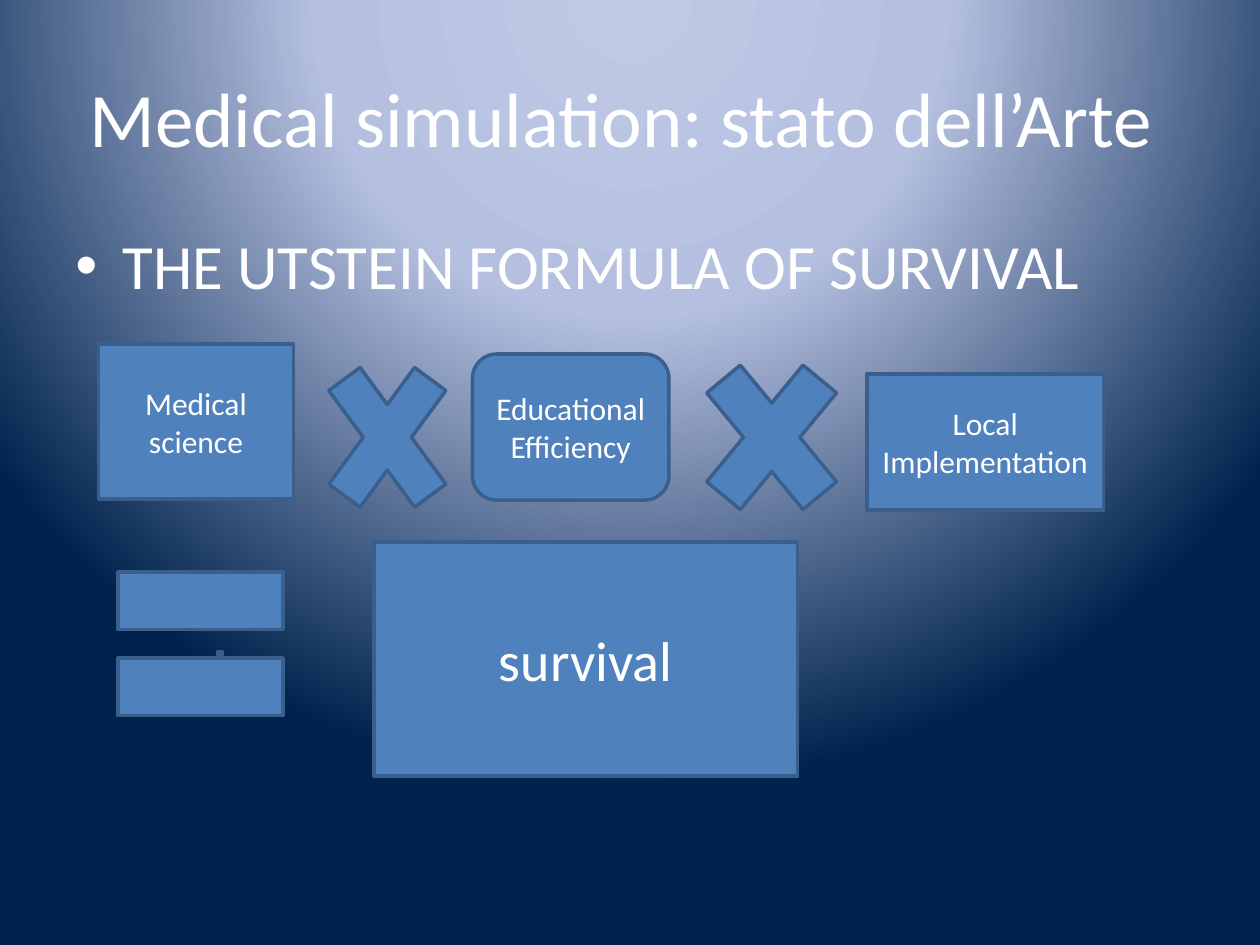
from pptx import Presentation
from pptx.dml.color import RGBColor
from pptx.enum import shapes, text
from pptx.oxml import parse_xml
from pptx.oxml import ns
from pptx.util import Pt

KIND = shapes.MSO_SHAPE
MID = text.MSO_ANCHOR.MIDDLE
TOP = text.MSO_ANCHOR.TOP
MAIN = ns.nsdecls("a", "p")

SIZE = (720, 540)
STOPS = [(0, "BFC9E5"), (40, "B5C0E0"), (100, "00234D")]
FOCUS = {"l": 50, "t": -80, "r": 50, "b": 180}
FILL, LINE, INK = "4F81BD", "3A5F8C", "FFFFFF"

TITLE = ("Medical simulation: stato dell’Arte ", (36, 21.6, 648, 90), 44)
BODY = ("THE UTSTEIN FORMULA OF SURVIVAL", (36, 126, 648, 356.4), 36)
ITEMS = [
    (KIND.RECTANGLE, (56.2, 196.6, 111.6, 88.6), "Medical science", 18),
    (KIND.ROUNDED_RECTANGLE, (270, 202.3, 112.3, 83.5), "Educational Efficiency", 18),
    (KIND.RECTANGLE, (495.3, 213.8, 135.3, 77.8), "Local Implementation", 18),
    (KIND.MATH_MULTIPLY, (174.2, 185.8, 94.3, 128.2), "", 18),
    (KIND.MATH_MULTIPLY, (388.1, 185.8, 105.8, 128.2), "", 18),
    (KIND.MATH_EQUAL, (123.8, 371.5, 3.6, 3.6), "", 18),
    (KIND.MATH_EQUAL, (50.4, 298.1, 128.2, 139.7), "", 18),
    (KIND.RECTANGLE, (213.8, 309.6, 241.9, 133.9), "survival", 32),
]


def color(code):
    return RGBColor.from_string(code)


def paint(slide):
    stops = "".join(
        f'<a:gs pos="{pos * 1000}"><a:srgbClr val="{code}"/></a:gs>' for pos, code in STOPS
    )
    rect = " ".join(f'{side}="{val * 1000}"' for side, val in FOCUS.items())
    slide.element.cSld.insert(0, parse_xml(
        f'<p:bg {MAIN}><p:bgPr><a:gradFill rotWithShape="1"><a:gsLst>{stops}</a:gsLst>'
        f'<a:path path="circle"><a:fillToRect {rect}/></a:path></a:gradFill>'
        "<a:effectLst/></p:bgPr></p:bg>"
    ))


def write(shape, words, size, align=text.PP_ALIGN.CENTER, anchor=MID):
    frame = shape.text_frame
    frame.word_wrap = True
    frame.vertical_anchor = anchor
    para = frame.paragraphs[0]
    para.alignment = align
    run = para.add_run()
    run.text = words
    run.font.color.rgb = color(INK)
    for key, val in {"name": "Calibri", "size": Pt(size)}.items():
        setattr(run.font, key, val)
    return para


def bullet(para):
    para.space_before = Pt(7.2)
    props = para._p.get_or_add_pPr()
    for key, val in {"marL": Pt(27), "indent": Pt(-27)}.items():
        props.set(key, str(val))
    for tag in ('buFont typeface="Arial"', 'buChar char="•"'):
        props.append(parse_xml(f"<a:{tag} {MAIN}/>"))


def main():
    deck = Presentation()
    deck.slide_width, deck.slide_height = map(Pt, SIZE)
    slide = deck.slides.add_slide(deck.slide_layouts[6])
    paint(slide)

    words, box, size = TITLE
    write(slide.shapes.add_textbox(*map(Pt, box)), words, size)
    words, box, size = BODY
    bullet(write(slide.shapes.add_textbox(*map(Pt, box)), words, size,
                 text.PP_ALIGN.LEFT, TOP))

    for kind, box, words, size in ITEMS:
        shape = slide.shapes.add_shape(kind, *map(Pt, box))
        shape.shadow.inherit = False
        shape.fill.solid()
        shape.fill.fore_color.rgb = color(FILL)
        shape.line.color.rgb = color(LINE)
        shape.line.width = Pt(2)
        if words:
            write(shape, words, size)

    deck.save("out.pptx")


if __name__ == "__main__":
    main()
